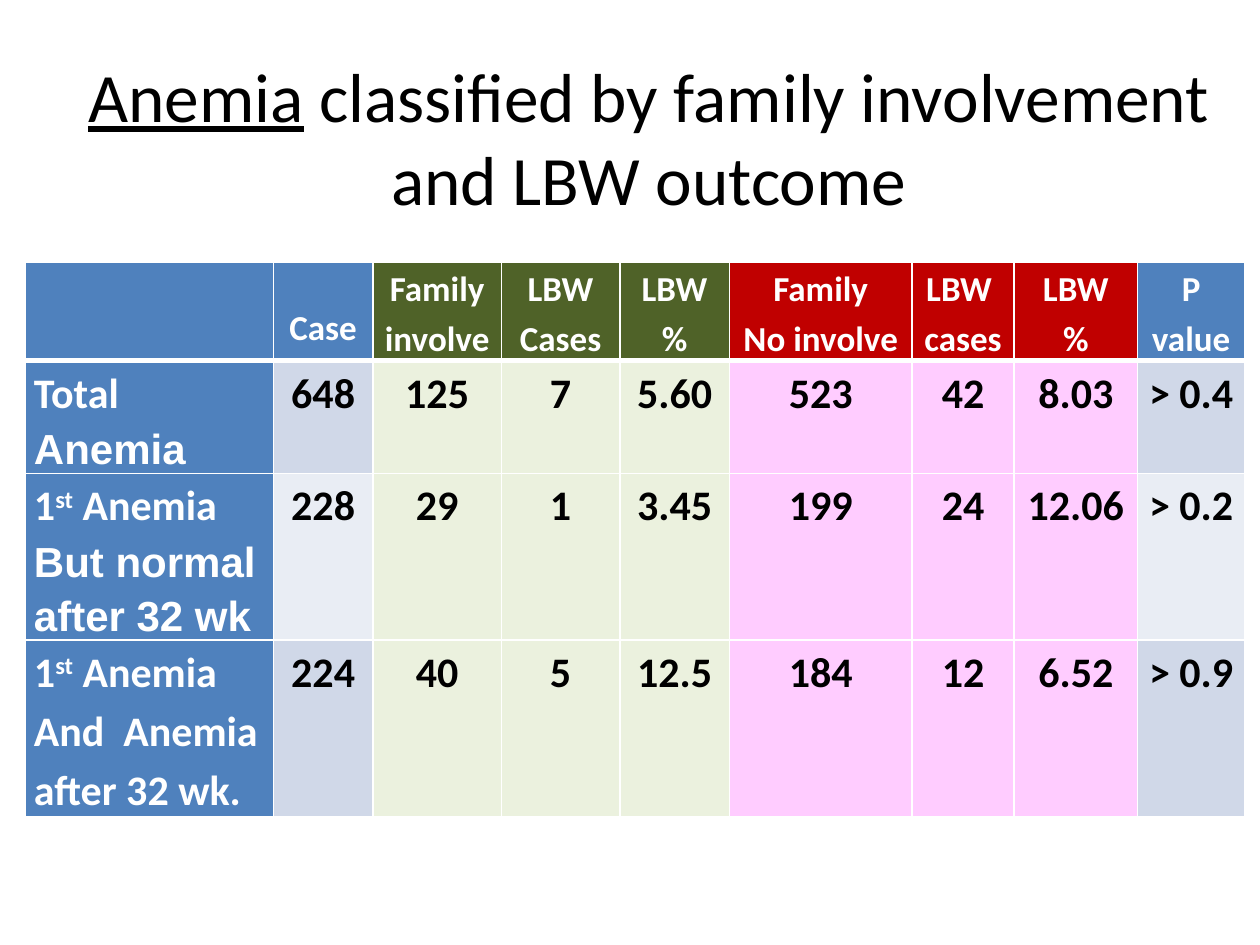
import pptx
import pptx.dml.color
import pptx.enum.text
import pptx.util
from lxml import etree
from pptx.oxml.ns import qn

Inches = pptx.util.Inches
ALIGN = pptx.enum.text.PP_ALIGN
ANCHOR = pptx.enum.text.MSO_ANCHOR

WHITE = "FFFFFF"
BLACK = "000000"
BLUE = "4F81BD"
DARK_GREEN = "4F6228"
RED = "C00000"
PALE_GREEN = "EBF1DE"
PINK = "FFCCFF"
BAND_FILLS = ["D0D8E8", "E9EDF4", "D0D8E8"]

COLUMN_WIDTHS = [1.97, 0.79, 1.02, 0.94, 0.87, 1.45, 0.81, 0.98, 0.85]
HEADER_FILLS = [BLUE] * 2 + [DARK_GREEN] * 3 + [RED] * 3 + [BLUE]
HEADERS = [
    [], ["Case"], ["Family involve"], ["LBW Cases"], ["LBW", "%"],
    ["Family", "No involve"], ["LBW  cases"], ["LBW", "%"], ["P value"],
]
FIRST_ANEMIA = ["1", "st", " Anemia"]
ROW_LABELS = [
    [(["Total"], "Calibri"), (["Anemia"], "Arial")],
    [(FIRST_ANEMIA, "Calibri"), (["But normal after 32 wk"], "Arial")],
    [(FIRST_ANEMIA, "Calibri"), (["And  Anemia after 32 wk."], "Calibri")],
]
ROW_VALUES = [
    ["648", "125", "7", "5.60", "523", "42", "8.03", "> 0.4"],
    ["228", "29", "1", "3.45", "199", "24", "12.06", "> 0.2"],
    ["224", "40", "5", "12.5", "184", "12", "6.52", "> 0.9"],
]


def color(value):
    return pptx.dml.color.RGBColor.from_string(value)


def style_font(font, size, ink, bold, name="Calibri"):
    font.name = name
    font.size = pptx.util.Pt(size)
    font.bold = bold
    font.color.rgb = color(ink)


def add_title(page):
    box = page.shapes.title
    box.left, box.top = Inches(0.5), Inches(0.3)
    box.width, box.height = Inches(9.3), Inches(1.56)
    frame = box.text_frame
    frame.word_wrap = True
    frame.auto_size = pptx.enum.text.MSO_AUTO_SIZE.NONE
    frame.vertical_anchor = ANCHOR.MIDDLE
    para = frame.paragraphs[0]
    para.alignment = ALIGN.CENTER
    style_font(para.font, 39.6, BLACK, False)
    for text, underline in [
        ("Anemia", True),
        (" classified by family involvement and LBW outcome", False),
    ]:
        span = para.add_run()
        span.text = text
        span.font.underline = underline


def fill_cell(cell, fill):
    cell.fill.solid()
    cell.fill.fore_color.rgb = color(fill)
    cell.margin_left = cell.margin_right = Inches(0.07)
    cell.margin_top = cell.margin_bottom = 0
    cell.vertical_anchor = ANCHOR.TOP


def write_cell(cell, lines, size, ink, align):
    frame = cell.text_frame
    for index, (pieces, font_name) in enumerate(lines):
        para = frame.add_paragraph() if index else frame.paragraphs[0]
        para.alignment = align
        para.line_spacing = 1.15
        style_font(para.font, size, ink, True, font_name)
        for piece in pieces:
            span = para.add_run()
            span.text = piece
            if piece == "st":
                span.font._element.set("baseline", "30000")


def add_borders(cell):
    properties = cell._tc.get_or_add_tcPr()
    widths = {"a:lnL": 1, "a:lnR": 1, "a:lnT": 1, "a:lnB": 3}
    for position, (tag, width) in enumerate(widths.items()):
        line = etree.Element(qn(tag), w=str(pptx.util.Pt(width)))
        fill = etree.SubElement(line, qn("a:solidFill"))
        etree.SubElement(fill, qn("a:srgbClr"), val=WHITE)
        properties.insert(position, line)


def fill_header(table):
    for column, (lines, fill) in enumerate(zip(HEADERS, HEADER_FILLS)):
        cell = table.cell(0, column)
        fill_cell(cell, fill)
        add_borders(cell)
        write_cell(cell, [([line], "Calibri") for line in lines],
                   20, WHITE, ALIGN.CENTER)
    table.cell(0, 1).margin_top = Inches(0.31)


def fill_body(table):
    rows = zip(ROW_LABELS, ROW_VALUES, BAND_FILLS)
    for row, (label, values, band) in enumerate(rows, start=1):
        label_cell = table.cell(row, 0)
        fill_cell(label_cell, BLUE)
        write_cell(label_cell, label, 24, WHITE, ALIGN.LEFT)
        fills = [band] + [PALE_GREEN] * 3 + [PINK] * 3 + [band]
        for column, (value, fill) in enumerate(zip(values, fills), start=1):
            cell = table.cell(row, column)
            fill_cell(cell, fill)
            write_cell(cell, [([value], "Calibri")], 24, BLACK, ALIGN.CENTER)


def add_results_table(page):
    box = page.shapes.add_table(
        len(ROW_VALUES) + 1, len(COLUMN_WIDTHS),
        Inches(0.2), Inches(2.08), Inches(9.69), Inches(4.32))
    table = box.table
    table.first_col = True
    for column, width in zip(table.columns, COLUMN_WIDTHS):
        column.width = Inches(width)
    for row in table.rows:
        row.height = Inches(0.21)
    box.height = Inches(4.32)
    fill_header(table)
    fill_body(table)


def main():
    deck = pptx.Presentation()
    deck.slide_width, deck.slide_height = Inches(10), Inches(7.5)
    page = deck.slides.add_slide(deck.slide_layouts[5])
    add_title(page)
    add_results_table(page)
    deck.save("out.pptx")


if __name__ == "__main__":
    main()
